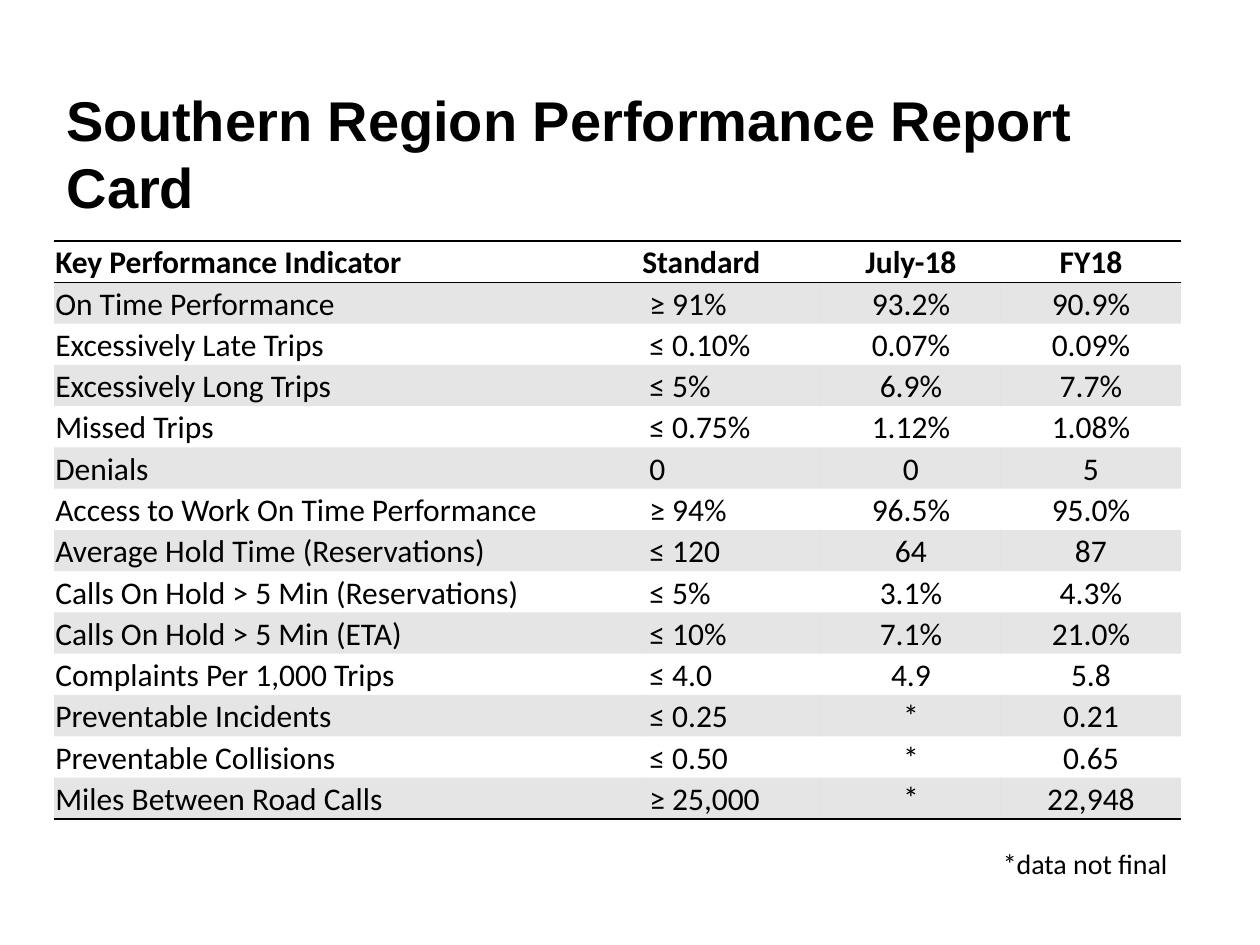
from pptx import Presentation, util as u
from pptx.dml.color import RGBColor
from pptx.enum import text
from pptx.oxml import parse_xml
from pptx.oxml.ns import nsdecls, qn

TITLE = "Southern Region Performance Report Card"
FOOTNOTE = "*data not final"
HEADER = ("Key Performance Indicator", "Standard", "July-18", "FY18")
KPIS = [
    ("On Time Performance", " ≥ 91%", "93.2%", "90.9%"),
    ("Excessively Late Trips", " ≤ 0.10%", "0.07%", "0.09%"),
    ("Excessively Long Trips", " ≤ 5%", "6.9%", "7.7%"),
    ("Missed Trips", " ≤ 0.75%", "1.12%", "1.08%"),
    ("Denials", " 0", "0", "5"),
    ("Access to Work On Time Performance", " ≥ 94%", "96.5%", "95.0%"),
    ("Average Hold Time (Reservations)", " ≤ 120", "64", "87"),
    ("Calls On Hold > 5 Min (Reservations)", " ≤ 5%", "3.1%", "4.3%"),
    ("Calls On Hold > 5 Min (ETA)", " ≤ 10%", "7.1%", "21.0%"),
    ("Complaints Per 1,000 Trips", " ≤ 4.0", "4.9", "5.8"),
    ("Preventable Incidents", " ≤ 0.25", "*", "0.21"),
    ("Preventable Collisions", " ≤ 0.50", "*", "0.65"),
    ("Miles Between Road Calls", " ≥ 25,000", "*", "22,948"),
]
ROWS = [HEADER] + KPIS
COL_WIDTHS = (587, 180, 180, 180)
LEFT, TABLE_TOP, TABLE_HEIGHT = 54, 241, 578
NO_GRID_STYLE = "{2D5ABB26-0587-4C30-8999-92F81FD0307C}"
BLACK, BAND = "000000", "808080"


def px(n):
    return u.Emu(round(n * 914400 / 126))


def color(value):
    return RGBColor.from_string(value)


def style(p, font, size, bold=False, align=text.PP_ALIGN.LEFT):
    p.alignment = align
    for r in p.runs:
        r.font.name, r.font.size, r.font.bold = font, u.Pt(size), bold
        r.font.color.rgb = color(BLACK)


def place(sp, left, top, width, height):
    sp.left, sp.top, sp.width, sp.height = map(px, (left, top, width, height))


def fill_band(cell):
    cell.fill.solid()
    cell.fill.fore_color.rgb = color(BAND)
    srgb = cell._tc.tcPr.find(".//" + qn("a:srgbClr"))
    srgb.append(parse_xml(f'<a:alpha {nsdecls("a")} val="20000"/>'))


def add_borders(cell, sides):
    for i, side in enumerate(sides):
        cell._tc.tcPr.insert(i, parse_xml(
            f'<a:ln{side} {nsdecls("a")} w="12700"><a:solidFill>'
            f'<a:srgbClr val="{BLACK}"/></a:solidFill></a:ln{side}>'))


def add_kpi_table(s):
    frame = s.shapes.add_table(len(ROWS), len(COL_WIDTHS), px(LEFT), px(TABLE_TOP),
                               px(sum(COL_WIDTHS)), px(TABLE_HEIGHT))
    table = frame.table
    table._tbl.tblPr.find(qn("a:tableStyleId")).text = NO_GRID_STYLE
    for column, width in zip(table.columns, COL_WIDTHS):
        column.width = px(width)
    last = len(ROWS) - 1
    for i, values in enumerate(ROWS):
        table.rows[i].height = px(TABLE_HEIGHT / len(ROWS))
        for j, value in enumerate(values):
            cell = table.cell(i, j)
            cell.margin_left = cell.margin_right = cell.margin_top = u.Inches(0.01)
            cell.margin_bottom = 0
            cell.vertical_anchor = text.MSO_ANCHOR.BOTTOM
            cell.text_frame.text = value
            align = text.PP_ALIGN.CENTER if j > 1 else text.PP_ALIGN.LEFT
            style(cell.text_frame.paragraphs[0], "Calibri", 18, i == 0, align)
            if i % 2:
                fill_band(cell)
            else:
                cell.fill.background()
            add_borders(cell, {0: "TB", last: "B"}.get(i, ""))
    table.cell(last, 2).vertical_anchor = text.MSO_ANCHOR.MIDDLE


def main():
    prs = Presentation()
    prs.slide_width, prs.slide_height = u.Inches(10), u.Inches(7.5)
    s = prs.slides.add_slide(prs.slide_layouts[5])

    title = s.shapes.title
    place(title, LEFT, 112, 1150, 81)
    tf = title.text_frame
    tf.text = TITLE
    tf.word_wrap = True
    tf.auto_size = text.MSO_AUTO_SIZE.NONE
    tf.vertical_anchor = text.MSO_ANCHOR.MIDDLE
    style(tf.paragraphs[0], "Arial", 32, True)

    add_kpi_table(s)

    note = s.shapes.add_textbox(0, 0, 0, 0)
    place(note, 902, 840, 278, 47)
    tf = note.text_frame
    tf.text = FOOTNOTE
    tf.word_wrap = True
    tf.auto_size = text.MSO_AUTO_SIZE.SHAPE_TO_FIT_TEXT
    style(tf.paragraphs[0], "Calibri", 16, align=text.PP_ALIGN.RIGHT)

    prs.save("out.pptx")


if __name__ == "__main__":
    main()
